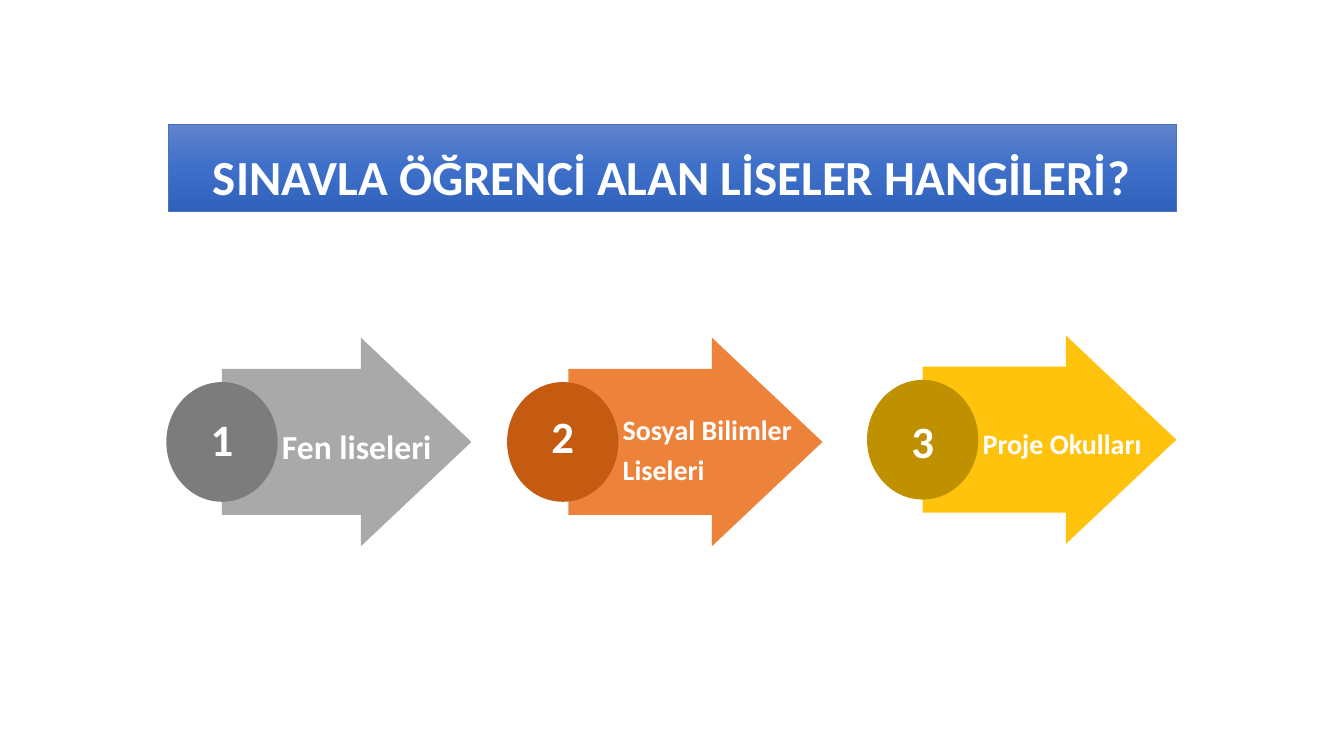
from dataclasses import dataclass

from pptx import Presentation
from pptx.dml.color import RGBColor
from pptx.enum.shapes import MSO_SHAPE
from pptx.enum.text import MSO_ANCHOR, MSO_AUTO_SIZE, PP_ALIGN
from pptx.oxml.ns import qn
from pptx.util import Pt
from lxml.etree import SubElement


@dataclass(frozen=True)
class Theme:
    """Colours, font and type sizes of the slide."""
    font: str = "Calibri"
    white: str = "FFFFFF"
    edge: str = "4472C4"
    blues: tuple = ((0, "6183CB"), (50, "3E70CA"), (100, "3062BB"))
    title: int = 35
    digit: int = 32
    large: int = 24
    small: int = 20


@dataclass(frozen=True)
class Step:
    """Text, colours and small shifts of one numbered arrow."""
    lines: str
    size: int
    arrow: str
    disc: str
    gap: float = 0
    lift: float = 0
    drop: float = 0


THEME = Theme()
STEPS = (
    (Step("Fen liseleri", THEME.large, "A5A5A5", "7C7C7C"),
     (118.8, 241.2, 218, 149)),
    (Step("Sosyal Bilimler\nLiseleri", THEME.small, "ED7D31", "C55A11",
          gap=4, lift=-2, drop=3), (362.2, 241.2, 225.3, 149)),
    (Step("Proje Okulları", THEME.small, "FFC000", "BF9000", lift=3),
     (619.3, 239.6, 221, 149)),
)


def place(part, box):
    """Move a part to a box given in points."""
    part.left, part.top, part.width, part.height = map(Pt, box)


def write(frame, text, size, align, space):
    """Fill a text frame with bold white text."""
    frame.text = text
    for para in frame.paragraphs:
        para.alignment = align
        para.line_spacing = space
        for run in para.runs:
            font = run.font
            font.name, font.size, font.bold = THEME.font, Pt(size), True
            font.color.rgb = RGBColor.from_string(THEME.white)


def shade(part):
    """Give a part the vertical blue gradient and a thin edge."""
    part.fill.gradient()
    part.fill.gradient_angle = 270
    stops = part.fill._fill._gradFill.find(qn("a:gsLst"))
    for stop in list(stops):
        stops.remove(stop)
    for pos, tone in THEME.blues:
        stop = SubElement(stops, qn("a:gs"), pos=str(pos * 1000))
        SubElement(stop, qn("a:srgbClr"), val=tone)
    part.line.color.rgb = RGBColor.from_string(THEME.edge)
    part.line.width = Pt(0.5)


def banner(slide, text, box):
    """Set the title in a blue band."""
    title = slide.shapes.title
    place(title, box)
    shade(title)
    frame = title.text_frame
    write(frame, text, THEME.title, PP_ALIGN.CENTER, 0.9)
    frame.word_wrap = True
    frame.auto_size = MSO_AUTO_SIZE.NONE
    frame.vertical_anchor = MSO_ANCHOR.BOTTOM


def solid(group, kind, box, tone):
    """Add a flat shape without line or shadow."""
    part = group.shapes.add_shape(kind, *map(Pt, box))
    part.shadow.inherit = False
    part.fill.solid()
    part.fill.fore_color.rgb = RGBColor.from_string(tone)
    part.line.fill.background()
    return part


def stage(slide, step, number, box):
    """Draw an arrow with its numbered disc and label."""
    left, top, width, height = box
    wide, tall = 79.5, 85.5
    mid = top + height / 2
    start = wide / 2 + step.gap
    group = slide.shapes.add_group_shape()

    arrow = solid(group, MSO_SHAPE.RIGHT_ARROW,
                  (left + start, top, width - start, height), step.arrow)
    arrow.adjustments[0] = 0.7
    arrow.adjustments[1] = 0.53
    tone = arrow.fill._fill._solidFill.find(qn("a:srgbClr"))
    SubElement(tone, qn("a:alpha"), val="95000")

    disc = solid(group, MSO_SHAPE.OVAL,
                 (left, mid - tall / 2, wide, tall), step.disc)
    frame = disc.text_frame
    write(frame, str(number), THEME.digit, PP_ALIGN.CENTER, 0.9)
    frame.vertical_anchor = MSO_ANCHOR.MIDDLE
    frame.margin_top = Pt(max(0, 2 * step.lift))
    frame.margin_bottom = Pt(max(0, -2 * step.lift))

    high = 66
    label = group.shapes.add_textbox(
        Pt(left + wide - 4), Pt(mid - high / 2 + step.drop),
        Pt(146), Pt(high))
    frame = label.text_frame
    write(frame, step.lines, step.size, PP_ALIGN.LEFT, 1.2)
    frame.word_wrap = True
    frame.vertical_anchor = MSO_ANCHOR.MIDDLE


def main():
    """Build and save the slide."""
    deck = Presentation()
    deck.slide_width, deck.slide_height = Pt(960), Pt(540)
    slide = deck.slides.add_slide(deck.slide_layouts[5])
    banner(slide, "SINAVLA ÖĞRENCİ ALAN LİSELER HANGİLERİ?",
           (120, 88.5, 720, 62.5))
    for number, (step, box) in enumerate(STEPS, 1):
        stage(slide, step, number, box)
    deck.save("out.pptx")


if __name__ == "__main__":
    main()
